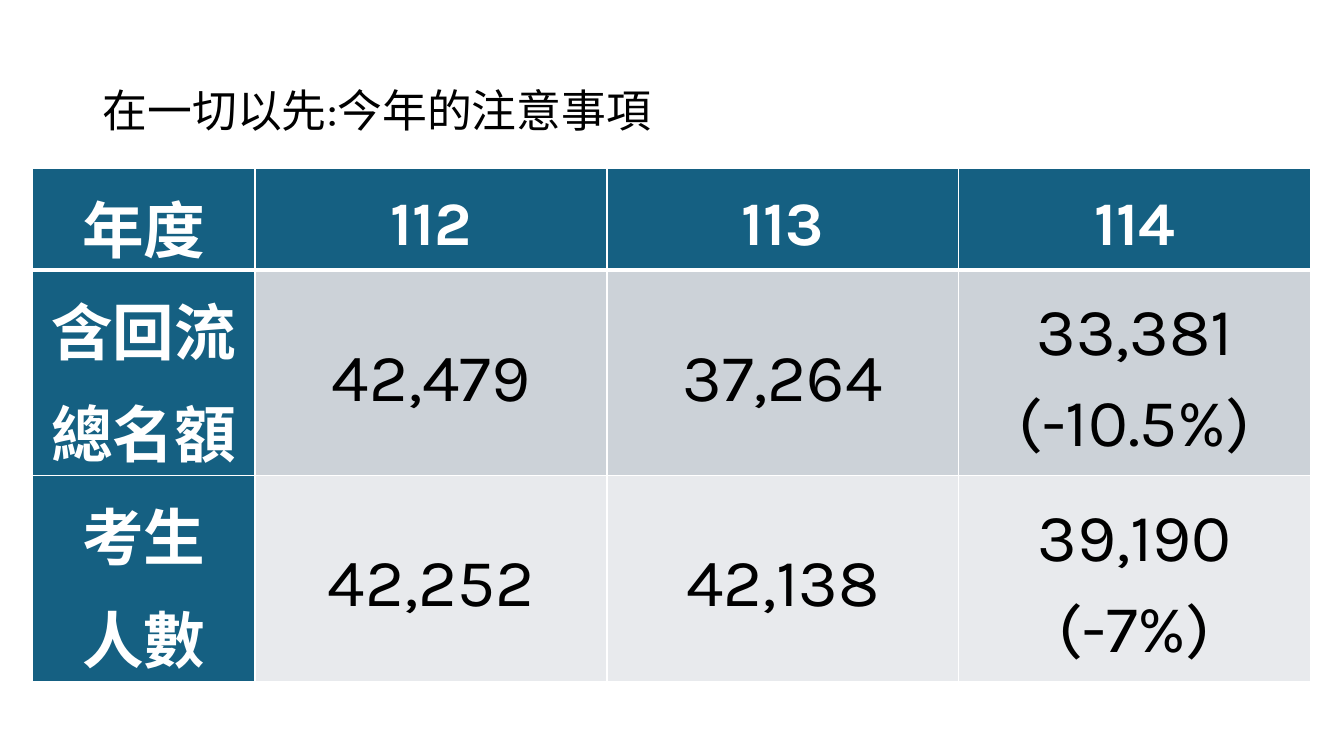
import pptx
import pptx.dml.color
import pptx.enum.text
import pptx.oxml
import pptx.oxml.ns
import pptx.util
from dataclasses import dataclass

Inches = pptx.util.Inches
Pt = pptx.util.Pt
PP_ALIGN = pptx.enum.text.PP_ALIGN
MSO_ANCHOR = pptx.enum.text.MSO_ANCHOR


def rgb(value):
    return pptx.dml.color.RGBColor.from_string(value)


@dataclass(frozen=True)
class Theme:
    font: str = "Karla"
    text: str = "000000"
    light: str = "FFFFFF"
    heading: str = "156082"
    bands: tuple = ("CCD2D8", "E8EAED")
    title_size: int = 32
    heading_size: int = 44
    value_size: int = 48
    thin: int = 1
    thick: int = 3


def write(tf, text, *, font, size, color, bold=False, align=PP_ALIGN.LEFT, spacing=1.0, after=0):
    p = tf.paragraphs[0]
    p.alignment = align
    p.line_spacing = spacing
    p.space_after = Pt(after)
    for i, line in enumerate(text.split("\n")):
        if i:
            p.add_line_break()
        r = p.add_run()
        r.text = line
        r.font.name = font
        r.font.size = Pt(size)
        r.font.bold = bold
        r.font.color.rgb = rgb(color)


class SlideBuilder:
    def __init__(self, prs, theme):
        self.theme = theme
        self.s = prs.slides.add_slide(prs.slide_layouts[6])

    def title(self, text, left, top, width, height):
        sp = self.s.shapes.add_textbox(Inches(left), Inches(top), Inches(width), Inches(height))
        tf = sp.text_frame
        tf.word_wrap = True
        tf.vertical_anchor = MSO_ANCHOR.MIDDLE
        t = self.theme
        write(tf, text, font=t.font, size=t.title_size, color=t.text, spacing=0.9)

    def borders(self, cell, top, bottom):
        thin = self.theme.thin
        tcPr = cell._tc.get_or_add_tcPr()
        for side, width in zip("LRTB", (thin, thin, top, bottom)):
            tcPr.append(pptx.oxml.parse_xml(
                f'<a:ln{side} {pptx.oxml.ns.nsdecls("a")} w="{Pt(width)}"><a:solidFill>'
                f'<a:srgbClr val="{self.theme.light}"/></a:solidFill></a:ln{side}>'))

    def cell(self, cell, text, row, col):
        t = self.theme
        is_heading = row == 0 or col == 0
        self.borders(cell, t.thick if row == 1 else t.thin, t.thick if row == 0 else t.thin)
        cell.fill.solid()
        cell.fill.fore_color.rgb = rgb(t.heading if is_heading else t.bands[(row - 1) % 2])
        cell.vertical_anchor = MSO_ANCHOR.MIDDLE
        cell.margin_left = cell.margin_right = Inches(0.07)
        cell.margin_top = cell.margin_bottom = 0
        write(cell.text_frame, text, font=t.font, bold=is_heading,
              size=t.heading_size if is_heading else t.value_size,
              color=t.light if is_heading else t.text,
              align=PP_ALIGN.CENTER, spacing=1.15, after=8)

    def table(self, rows, left, top, widths, heights):
        table = self.s.shapes.add_table(
            len(rows), len(widths), Inches(left), Inches(top),
            Inches(sum(widths)), Inches(sum(heights))).table
        for column, width in zip(table.columns, widths):
            column.width = Inches(width)
        for row, height in zip(table.rows, heights):
            row.height = Inches(height)
        for i, texts in enumerate(rows):
            for j, text in enumerate(texts):
                self.cell(table.cell(i, j), text, i, j)


def main():
    prs = pptx.Presentation()
    prs.slide_width = Inches(13.33)
    prs.slide_height = Inches(7.5)
    slide = SlideBuilder(prs, Theme())
    slide.title("在一切以先:今年的注意事項", 0.92, 0.4, 11.5, 1.45)
    quota_rows = [
        ("年度", "112", "113", "114"),
        ("含回流\n總名額", "42,479", "37,264", "33,381\n(-10.5%)"),
        ("考生\n人數", "42,252", "42,138", "39,190\n(-7%)"),
    ]
    slide.table(quota_rows, 0.32, 1.67, [2.21] + [3.49] * 3, [1.01] + [2.04] * 2)
    prs.save("out.pptx")


if __name__ == "__main__":
    main()
